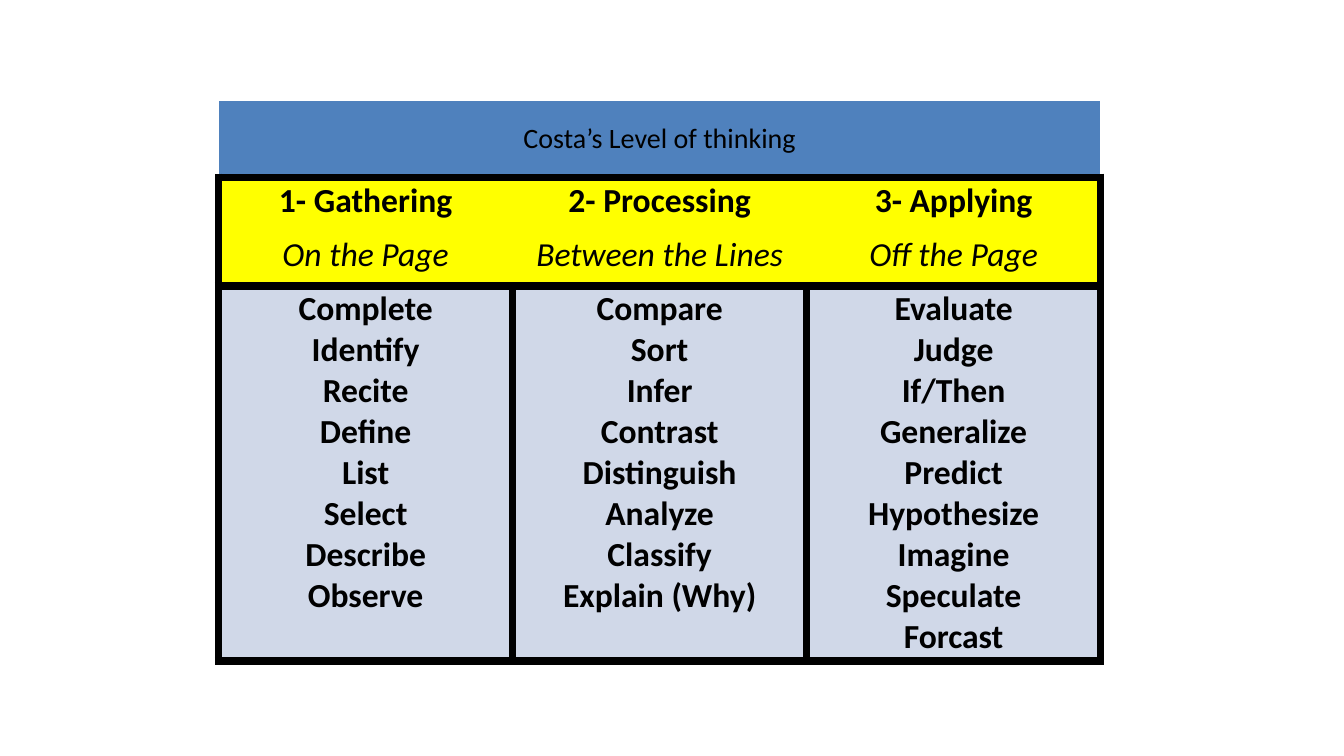
from lxml.etree import SubElement
from pptx import Presentation
from pptx.dml.color import RGBColor
from pptx.enum.text import MSO_ANCHOR as Anchor, PP_ALIGN as Align
from pptx.oxml.ns import qn
from pptx.util import Pt

BLACK = RGBColor(0x00, 0x00, 0x00)
WHITE = RGBColor(0xFF, 0xFF, 0xFF)
BLUE = RGBColor(0x4F, 0x81, 0xBD)
YELLOW = RGBColor(0xFF, 0xFF, 0x00)
PALE_BLUE = RGBColor(0xD0, 0xD8, 0xE8)

THICK = (BLACK, 6)
THIN = (WHITE, 1)
NO_LINE = None

TITLE = "Costa’s Level of thinking"
LEVELS = [
    ("1- Gathering", "On the Page",
     ["Complete", "Identify", "Recite", "Define", "List", "Select",
      "Describe", "Observe"]),
    ("2- Processing", "Between the Lines",
     ["Compare", "Sort", "Infer", "Contrast", "Distinguish", "Analyze",
      "Classify", "Explain (Why)"]),
    ("3- Applying", "Off the Page",
     ["Evaluate", "Judge", "If/Then", "Generalize", "Predict", "Hypothesize",
      "Imagine", "Speculate", "Forcast"]),
]
ROW_HEIGHTS = [54.7, 33.3, 43.9, 263.4]


def set_borders(cell, left, right, top, bottom):
    properties = cell._tc.get_or_add_tcPr()
    sides = zip(("a:lnL", "a:lnR", "a:lnT", "a:lnB"), (left, right, top, bottom))
    for position, (tag, border) in enumerate(sides):
        line = SubElement(properties, qn(tag))
        properties.insert(position, line)
        if border is NO_LINE:
            SubElement(line, qn("a:noFill"))
            continue
        color, width = border
        line.set("w", str(Pt(width)))
        fill = SubElement(line, qn("a:solidFill"))
        SubElement(fill, qn("a:srgbClr")).set("val", str(color))


def fill_cell(cell, text, color, borders, size=24, bold=False, italic=False,
              anchor=Anchor.MIDDLE):
    cell.fill.solid()
    cell.fill.fore_color.rgb = color
    cell.margin_left = cell.margin_right = Pt(4.5)
    cell.margin_top = cell.margin_bottom = Pt(2.2)
    cell.vertical_anchor = anchor
    cell.text_frame.text = text
    for para in cell.text_frame.paragraphs:
        para.alignment = Align.CENTER
        for span in para.runs:
            font = span.font
            font.name, font.size = "Calibri", Pt(size)
            font.bold, font.italic = bold, italic
            font.color.rgb = BLACK
    set_borders(cell, *borders)


def add_levels_table(page, left, top, width):
    count = len(LEVELS)
    frame = page.shapes.add_table(len(ROW_HEIGHTS), count, Pt(left), Pt(top),
                                  Pt(width), Pt(sum(ROW_HEIGHTS)))
    table = frame.table
    for row, height in zip(table.rows, ROW_HEIGHTS):
        row.height = Pt(height)
    for column in table.columns:
        column.width = Pt(width / count)

    table.cell(0, 0).merge(table.cell(0, count - 1))
    fill_cell(table.cell(0, 0), TITLE, BLUE, (THIN, THIN, THIN, THICK), size=20)
    for index, (level, place, verbs) in enumerate(LEVELS):
        outer_left = THICK if index == 0 else NO_LINE
        outer_right = THICK if index == count - 1 else NO_LINE
        fill_cell(table.cell(1, index), level, YELLOW,
                  (outer_left, outer_right, THICK, NO_LINE), bold=True)
        fill_cell(table.cell(2, index), place, YELLOW,
                  (outer_left, outer_right, NO_LINE, THICK), italic=True)
        fill_cell(table.cell(3, index), "\n".join(verbs), PALE_BLUE,
                  (THICK,) * 4, bold=True, anchor=Anchor.TOP)


def main():
    deck = Presentation()
    deck.slide_width, deck.slide_height = Pt(960), Pt(540)
    page = deck.slides.add_slide(deck.slide_layouts[6])
    add_levels_table(page, 156.2, 72, 630)
    deck.save("out.pptx")


if __name__ == "__main__":
    main()
